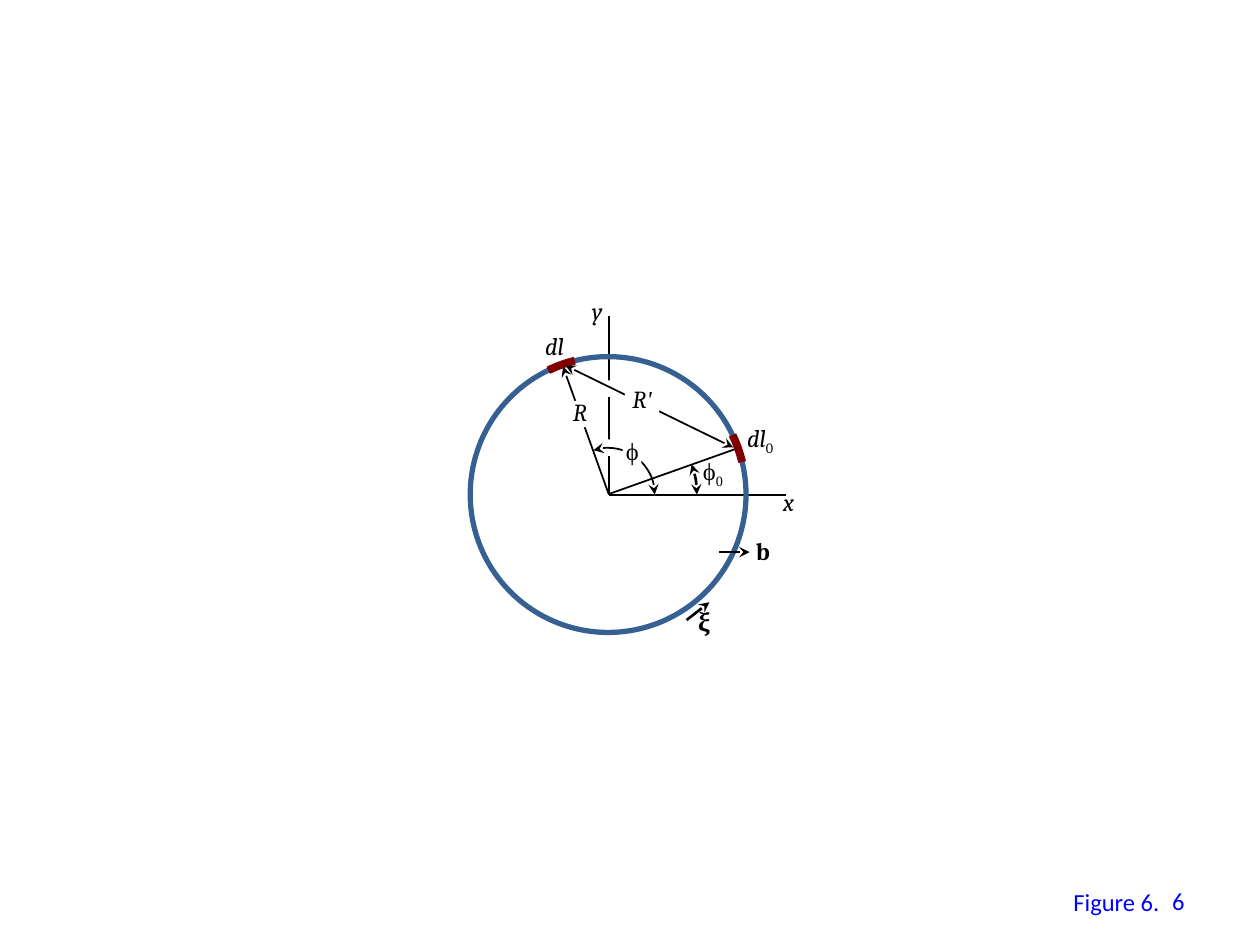
"""Draw the circular dislocation loop figure with its angles and vectors."""
from lxml import etree
from pptx import Presentation
from pptx.dml.color import RGBColor
from pptx.enum.shapes import MSO_CONNECTOR, MSO_SHAPE
from pptx.enum.text import MSO_ANCHOR, MSO_AUTO_SIZE, PP_ALIGN
from pptx.oxml.ns import qn
from pptx.util import Cm, Pt

BLACK = RGBColor(0x00, 0x00, 0x00)
WHITE = RGBColor(0xFF, 0xFF, 0xFF)
BLUE = RGBColor(0x00, 0x00, 0xFF)
STEEL = RGBColor(0x37, 0x60, 0x92)
MAROON = RGBColor(0x80, 0x00, 0x00)
STRAIGHT = MSO_CONNECTOR.STRAIGHT
RECT, OVAL, ARC = MSO_SHAPE.RECTANGLE, MSO_SHAPE.OVAL, MSO_SHAPE.ARC
FIT, MIDDLE, RIGHT = MSO_AUTO_SIZE.SHAPE_TO_FIT_TEXT, MSO_ANCHOR.MIDDLE, PP_ALIGN.RIGHT
SERIF, ROMAN, SANS = "Cambria", "Times New Roman", "Calibri"
MID_X, MID_Y, RADIUS = 12.26, 9.97, 2.78
BOTH, TIP = ("headEnd", "tailEnd"), ("tailEnd",)


class Figure:
    def __init__(self, slide):
        self.shapes = slide.shapes
        self.size = Pt(14)

    def stroke(self, shape, color, width, ends=()):
        shape.line.color.rgb = color
        shape.line.width = Pt(width)
        pen = shape.line._get_or_add_ln()
        for end in ends:
            etree.SubElement(pen, qn("a:" + end), type="stealth")

    def line(self, x1, y1, x2, y2, width=1, ends=()):
        link = self.shapes.add_connector(STRAIGHT, Cm(x1), Cm(y1), Cm(x2), Cm(y2))
        self.stroke(link, BLACK, width, ends)
        etree.SubElement(link._element.spPr, qn("a:effectLst"))

    def round(self, kind, radius, color, width, ends=()):
        side = Cm(2 * radius)
        ring = self.shapes.add_shape(
            kind, Cm(MID_X - radius), Cm(MID_Y - radius), side, side)
        ring.shadow.inherit = False
        ring.fill.background()
        self.stroke(ring, color, width, ends)
        return ring

    def arc(self, radius, start, stop, color, width, ends=()):
        curve = self.round(ARC, radius, color, width, ends)
        for i, angle in enumerate((start, stop)):
            curve.adjustments[i] = angle * 0.6

    def patch(self, x, y, wide, high):
        gap = self.shapes.add_shape(RECT, Cm(x), Cm(y), Cm(wide), Cm(high))
        gap.shadow.inherit = False
        gap.fill.solid()
        gap.fill.fore_color.rgb = WHITE
        gap.line.fill.background()

    def text(self, x, y, wide, words, font=SERIF, color=BLACK, high=0.86,
             bold=False, slant=False, sub="", prime=""):
        box = self.shapes.add_textbox(Cm(x), Cm(y), Cm(wide), Cm(high))
        frame = box.text_frame
        frame.text = words
        frame.word_wrap = False
        frame.auto_size = FIT
        para = frame.paragraphs[0]
        for tail in filter(None, (sub, prime)):
            para.add_run().text = tail
        for run in para.runs:
            run.font.name = font
            run.font.size = self.size
            run.font.color.rgb = color
            run.font.bold = bold
            run.font.italic = slant
        last = para.runs[-1]
        if sub:
            last.font.italic = False
            last._r.get_or_add_rPr().set("baseline", "-25000")
        if prime:
            last.font.name = ROMAN
        return frame

    def number(self, x, y, wide, high, words):
        frame = self.text(x, y, wide, words, SANS, BLUE, high)
        frame.auto_size = MSO_AUTO_SIZE.NONE
        frame.word_wrap = True
        frame.vertical_anchor = MIDDLE
        frame.paragraphs[0].alignment = RIGHT


def main():
    deck = Presentation()
    deck.slide_width, deck.slide_height = Cm(25.4), Cm(19.05)
    fig = Figure(deck.slides.add_slide(deck.slide_layouts[6]))

    fig.text(21.39, 17.75, 2.26, "Figure 6.", SANS, BLUE)
    fig.line(12.27, 9.96, 14.86, 9.04)
    fig.line(12.27, 6.38, 12.27, 9.98)
    fig.patch(12.22, 8.86, 0.15, 0.33)
    fig.patch(12.19, 7.67, 0.15, 0.33)
    fig.text(10.74, 6.55, 1.04, "dl", slant=True)
    fig.line(15.85, 9.98, 12.27, 9.98)
    fig.round(OVAL, RADIUS, STEEL, 3)
    fig.line(12.27, 9.96, 11.35, 7.39, ends=TIP)
    fig.arc(0.94, 251.7, 0, BLACK, 1, BOTH)
    fig.arc(1.79, 340.2, 0, BLACK, 1.5, BOTH)
    fig.arc(RADIUS, 244.3, 256, MAROON, 4.5)
    fig.text(15.54, 9.7, 0.86, "x", slant=True)
    fig.line(14.5, 11.13, 15.11, 11.13, 1.5, TIP)
    fig.line(13.84, 12.5, 14.3, 12.14, 1.5, TIP)
    fig.text(13.82, 12.12, 0.76, "ξ", bold=True)
    fig.text(14.99, 10.69, 0.79, "b", bold=True)
    fig.text(14.81, 8.41, 1.19, "dl", slant=True, sub="0")
    fig.arc(RADIUS, 334.4, 346.4, MAROON, 4.5)
    fig.text(13.92, 9.07, 0.94, "ϕ", ROMAN, sub="0")
    fig.text(11.68, 5.84, 0.86, "y", slant=True)
    fig.patch(11.46, 8.08, 0.41, 0.53)
    fig.text(11.3, 7.87, 0.94, "R", slant=True)
    fig.patch(12.55, 8.94, 0.38, 0.48)
    fig.text(12.37, 8.66, 0.79, "ϕ", ROMAN)
    fig.number(18.21, 17.65, 5.92, 1.02, "6")
    fig.line(14.78, 9.02, 11.4, 7.37, ends=BOTH)
    fig.patch(12.6, 7.85, 0.69, 0.48)
    fig.text(12.5, 7.62, 1.07, "R", slant=True, prime="'")
    deck.save("out.pptx")


if __name__ == "__main__":
    main()
